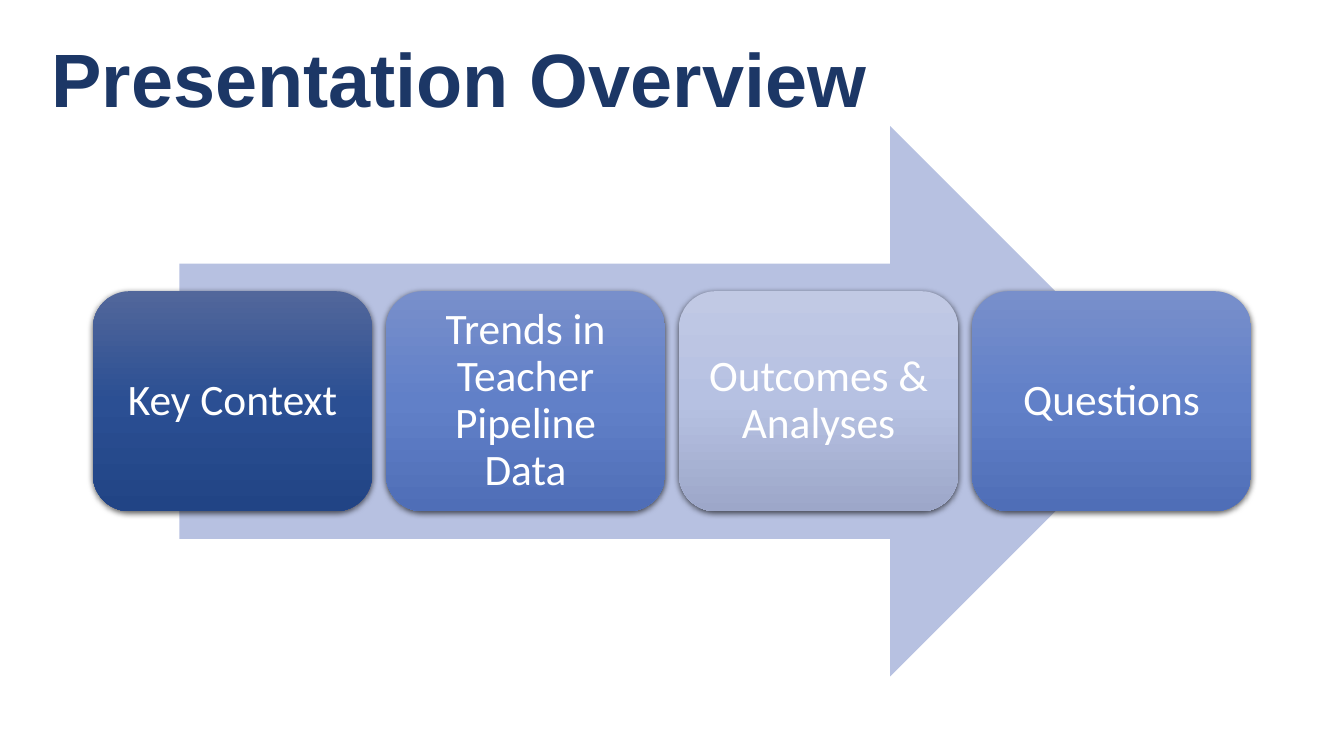
from copy import deepcopy
from dataclasses import dataclass

from lxml.etree import SubElement
from pptx import Presentation
from pptx.dml.color import RGBColor
from pptx.enum.shapes import MSO_SHAPE
from pptx.enum.text import MSO_ANCHOR, MSO_AUTO_SIZE, PP_ALIGN
from pptx.oxml.ns import qn
from pptx.shapes.autoshape import Shape
from pptx.slide import Slide
from pptx.util import Pt


@dataclass(frozen=True)
class Theme:
    title_font: str = "Arial"
    body_font: str = "Calibri"
    title_size: float = 54
    body_size: float = 31
    title: str = "1C3766"
    arrow: str = "B7C1E1"
    text: str = "FFFFFF"
    shadow: str = "000000"
    navy: tuple[str, ...] = ("52679B", "2B4F93", "214485")
    blue: tuple[str, ...] = ("788FCB", "6180C8", "4F6EB7")
    pale: tuple[str, ...] = ("C1C9E4", "B6C1E2", "9DA7C9")


@dataclass(frozen=True)
class Step:
    label: str
    gradient: tuple[str, ...]


THEME = Theme()
STEPS = (
    Step("Key Context", THEME.navy),
    Step("Trends in Teacher Pipeline Data", THEME.blue),
    Step("Outcomes & Analyses", THEME.pale),
    Step("Questions", THEME.blue),
)
CENTRE_Y = 286.6
STEP_LEFT, STEP_PITCH = 66.4, 209.3
STEP_WIDTH, STEP_HEIGHT = 199.4, 157.2
ARROW_LEFT, ARROW_WIDTH, ARROW_HEIGHT = 128.2, 704.2, 393.2


def write(sp: Shape, text: str, *, font: str, size: float, color: str,
          align: PP_ALIGN, margins: tuple[float, float], bold: bool = False) -> None:
    """Fill a shape with one middle-anchored paragraph; margins are (side, top and bottom)."""
    tf = sp.text_frame
    tf.word_wrap = True
    tf.auto_size = MSO_AUTO_SIZE.NONE
    tf.vertical_anchor = MSO_ANCHOR.MIDDLE
    tf.margin_left = tf.margin_right = Pt(margins[0])
    tf.margin_top = tf.margin_bottom = Pt(margins[1])
    p = tf.paragraphs[0]
    p.alignment = align
    p.line_spacing = 0.9
    p.space_before = Pt(0)
    r = p.add_run()
    r.text = text
    r.font.name, r.font.size, r.font.bold = font, Pt(size), bold
    r.font.color.rgb = RGBColor.from_string(color)


def add_plain_shape(s: Slide, kind: MSO_SHAPE, left: float, width: float,
                    height: float) -> Shape:
    """Add a shape without line or shadow, centred on the arrow's axis."""
    sp = s.shapes.add_shape(kind, Pt(left), Pt(CENTRE_Y - height / 2), Pt(width), Pt(height))
    sp.line.fill.background()
    sp.shadow.inherit = False
    return sp


def fill_gradient(sp: Shape, colors: tuple[str, ...]) -> None:
    """Fill from top to bottom with three evenly spaced colours."""
    sp.fill.gradient()
    sp.fill.gradient_angle = 270
    stop_list = sp._element.spPr.find(qn("a:gradFill")).find(qn("a:gsLst"))
    stop_list.insert(1, deepcopy(stop_list[0]))
    for i, (stop, color) in enumerate(zip(sp.fill.gradient_stops, colors)):
        stop.position = i / (len(colors) - 1)
        stop.color.rgb = RGBColor.from_string(color)


def add_shadow(sp: Shape) -> None:
    effects = sp._element.spPr.find(qn("a:effectLst"))
    shadow = SubElement(effects, qn("a:outerShdw"), blurRad=str(Pt(4.5)),
                        dist=str(Pt(1.5)), dir="5400000", algn="ctr", rotWithShape="0")
    color = SubElement(shadow, qn("a:srgbClr"), val=THEME.shadow)
    SubElement(color, qn("a:alpha"), val="63000")


def add_title(s: Slide, text: str) -> None:
    sp = s.shapes.title
    sp.left, sp.top, sp.width, sp.height = Pt(29.5), Pt(7.2), Pt(864.7), Pt(104.4)
    write(sp, text, font=THEME.title_font, size=THEME.title_size, color=THEME.title,
          align=PP_ALIGN.LEFT, margins=(7.2, 3.6), bold=True)


def add_arrow(s: Slide) -> None:
    sp = add_plain_shape(s, MSO_SHAPE.RIGHT_ARROW, ARROW_LEFT, ARROW_WIDTH, ARROW_HEIGHT)
    sp.fill.solid()
    sp.fill.fore_color.rgb = RGBColor.from_string(THEME.arrow)


def add_step(s: Slide, step: Step, left: float) -> None:
    sp = add_plain_shape(s, MSO_SHAPE.ROUNDED_RECTANGLE, left, STEP_WIDTH, STEP_HEIGHT)
    fill_gradient(sp, step.gradient)
    add_shadow(sp)
    write(sp, step.label, font=THEME.body_font, size=THEME.body_size, color=THEME.text,
          align=PP_ALIGN.CENTER, margins=(9.3, 9.3))


def main() -> None:
    prs = Presentation()
    prs.slide_width, prs.slide_height = Pt(960), Pt(540)
    s = prs.slides.add_slide(prs.slide_layouts[5])
    add_title(s, "Presentation Overview")
    add_arrow(s)
    for i, step in enumerate(STEPS):
        add_step(s, step, STEP_LEFT + i * STEP_PITCH)
    prs.save("out.pptx")


if __name__ == "__main__":
    main()
